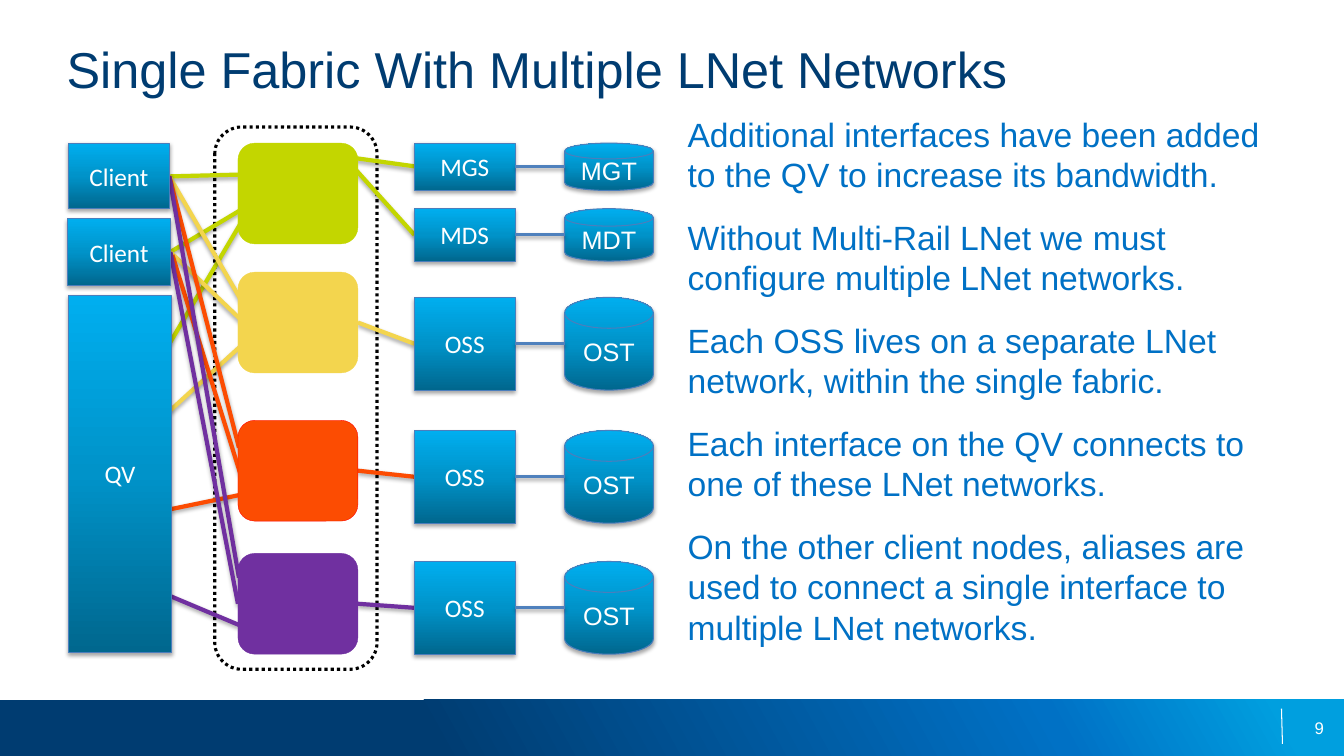
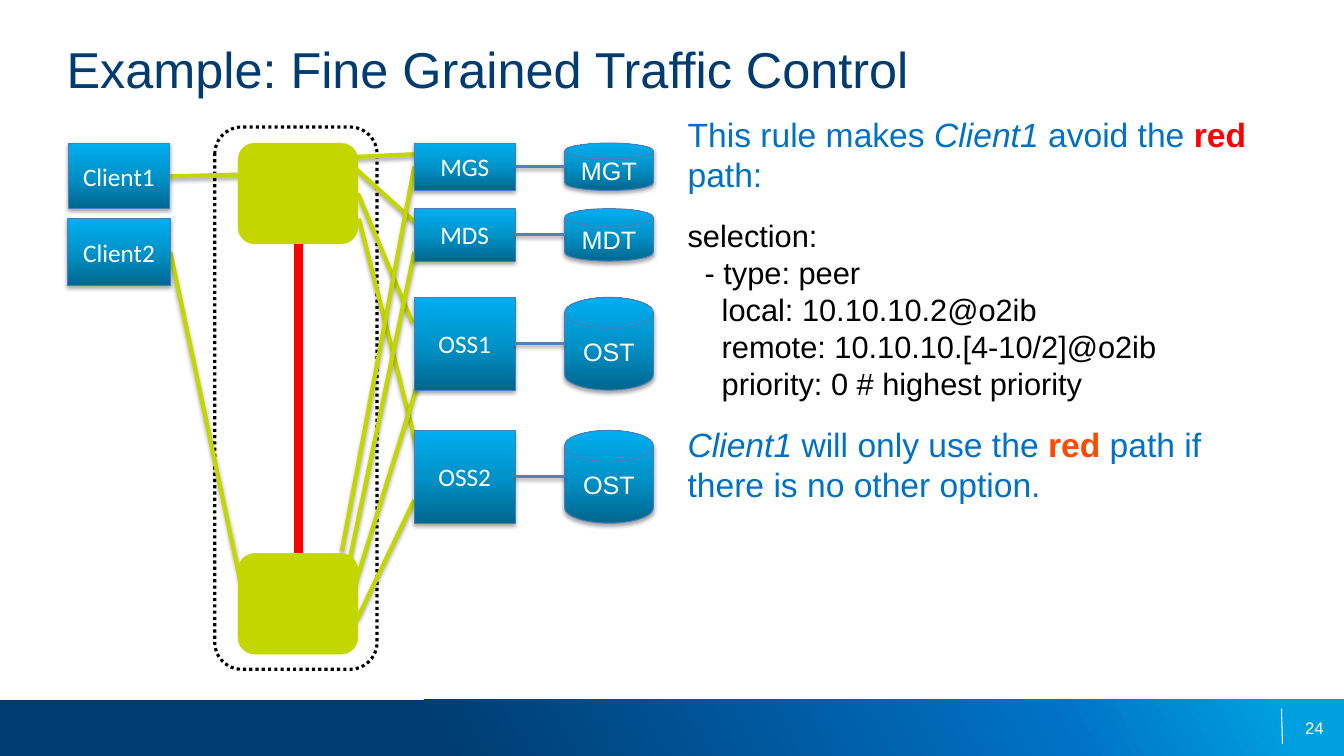
from collections import namedtuple

from lxml import etree
from pptx import Presentation
from pptx.dml.color import RGBColor
from pptx.enum import dml, shapes, text
from pptx.oxml.ns import qn
from pptx.util import Inches, Pt

NAVY = RGBColor(0x00, 0x3C, 0x71)
BLUE = RGBColor(0x00, 0x71, 0xC5)
SKY = RGBColor(0x00, 0x9F, 0xDF)
NODE_DARK = RGBColor(0x00, 0x67, 0x8E)
NODE_MID = RGBColor(0x00, 0x93, 0xC9)
NODE_LIGHT = RGBColor(0x00, 0xAE, 0xEF)
NODE_EDGE = RGBColor(0x4B, 0x7E, 0xBC)
DISK_LINK = RGBColor(0x4F, 0x81, 0xBD)
LIME = RGBColor(0xC3, 0xD6, 0x00)
SAND = RGBColor(0xF3, 0xD5, 0x4E)
ORANGE = RGBColor(0xFC, 0x4C, 0x02)
PURPLE = RGBColor(0x70, 0x30, 0xA0)
RED = RGBColor(0xFF, 0x00, 0x00)
WHITE = RGBColor(0xFF, 0xFF, 0xFF)
BLACK = RGBColor(0x00, 0x00, 0x00)

BAND_STOPS = [(32, NAVY), (78, BLUE), (95, SKY)]
NODE_STOPS = [(0, NODE_DARK), (50, NODE_MID), (100, NODE_LIGHT)]

Box = namedtuple("Box", "left top width height")
Span = namedtuple("Span", "text color bold italic size", defaults=(BLUE, False, False, 24))

TITLE_BOX = Box(0.66, 0.38, 12, 0.64)
BAND_BOX = Box(0, 6.94, 13.33, 0.56)
DIAGRAM_BOX = Box(0.67, 1.26, 5.81, 5.38)
NOTES_BOX = Box(6.82, 1.13, 5.84, 5.62)

# Positions below are inches from the top left corner of the diagram.
CLIENT_BOXES = [Box(0.01, 0.16, 1, 0.65), Box(0, 0.91, 1.02, 0.66), Box(0.01, 1.67, 1.02, 3.54)]
SERVER_ROWS = [(0.16, 0.47), (0.81, 0.52), (1.69, 0.92), (3.01, 0.92), (4.31, 0.92)]
SERVER_LEFT, SERVER_WIDTH = 3.44, 1
DISK_LEFT, DISK_WIDTH = 4.93, 0.88
SWITCH_LEFT, SWITCH_WIDTH, SWITCH_HEIGHT = 1.69, 1.19, 1
FABRIC_LEFT, FABRIC_WIDTH = 1.46, 1.61
PORT_1, PORT_2 = (1.01, 0.49), (1.02, 1.24)


def inside(box, part):
    return Box(box.left + part.left, box.top + part.top, part.width, part.height)


def set_gradient(shape, stops, angle):
    shape.fill.gradient()
    gradient = shape._element.spPr.find(qn("a:gradFill"))
    for child in list(gradient):
        gradient.remove(child)
    stop_list = etree.SubElement(gradient, qn("a:gsLst"))
    for percent, color in stops:
        stop = etree.SubElement(stop_list, qn("a:gs"), pos=str(percent * 1000))
        etree.SubElement(stop, qn("a:srgbClr"), val=str(color))
    etree.SubElement(gradient, qn("a:lin"), ang=str(angle * 60000), scaled="0")


def set_shadow(item, opacity=35, distance=1.8):
    """Replace the theme shadow by a soft one below, or by none at opacity 0."""
    properties = item._element.spPr
    effects = properties.find(qn("a:effectLst"))
    if effects is None:
        effects = etree.SubElement(properties, qn("a:effectLst"))
    if opacity:
        shadow = etree.SubElement(effects, qn("a:outerShdw"), blurRad=str(Pt(3.1)),
                                  dist=str(Pt(distance)), dir="5400000", rotWithShape="0")
        color = etree.SubElement(shadow, qn("a:srgbClr"), val=str(BLACK))
        etree.SubElement(color, qn("a:alpha"), val=str(opacity * 1000))


def add_span(para, words, size, color, font="Arial", bold=False, italic=False):
    run = para.add_run()
    run.text = words
    run.font.name = font
    run.font.size = Pt(size)
    run.font.color.rgb = color
    run.font.bold = bold
    run.font.italic = italic


def add_outline(page, kind, box, color=None, width=0.75):
    shape = page.shapes.add_shape(kind, *map(Inches, box))
    shape.shadow.inherit = False
    if color is None:
        shape.line.fill.background()
    else:
        shape.line.color.rgb = color
        shape.line.width = Pt(width)
    return shape


def add_line(page, start, end, color, width, opacity=35, distance=1.8):
    line = page.shapes.add_connector(shapes.MSO_CONNECTOR.STRAIGHT, *map(Inches, start + end))
    line.line.color.rgb = color
    line.line.width = Pt(width)
    set_shadow(line, opacity, distance)


def clear_margins(frame):
    frame.word_wrap = True
    frame.margin_left = frame.margin_right = frame.margin_top = frame.margin_bottom = 0


def add_text_box(page, box):
    frame = page.shapes.add_textbox(*map(Inches, box)).text_frame
    clear_margins(frame)
    return frame


def add_title(page, words):
    title = page.shapes.title
    title.left, title.top, title.width, title.height = map(Inches, TITLE_BOX)
    frame = title.text_frame
    clear_margins(frame)
    frame.vertical_anchor = text.MSO_ANCHOR.TOP
    para = frame.paragraphs[0]
    para.alignment = text.PP_ALIGN.LEFT
    add_span(para, words, 36, NAVY)


def add_footer(page, box, number):
    band = add_outline(page, shapes.MSO_SHAPE.RECTANGLE, box)
    set_gradient(band, BAND_STOPS, 331)
    add_line(page, (box.left + 12.71, box.top + 0.09), (box.left + 12.72, box.top + 0.44),
             WHITE, 0.75, opacity=0)
    para = add_text_box(page, inside(box, Box(12.63, 0.18, 0.5, 0.2))).paragraphs[0]
    para.alignment = text.PP_ALIGN.RIGHT
    add_span(para, str(number), 12, WHITE)


def add_node(page, box, label, kind=shapes.MSO_SHAPE.RECTANGLE, font="Calibri"):
    node = add_outline(page, kind, box, NODE_EDGE)
    set_gradient(node, NODE_STOPS, 270)
    set_shadow(node)
    node.text_frame.vertical_anchor = text.MSO_ANCHOR.MIDDLE
    para = node.text_frame.paragraphs[0]
    para.alignment = text.PP_ALIGN.CENTER
    add_span(para, label, 18, WHITE, font)


def add_server_row(page, box, server, disk):
    """Place a server, its disk and the line between them."""
    middle = box.top + box.height / 2
    disk_left = box.left + DISK_LEFT - SERVER_LEFT
    add_node(page, Box(box.left, box.top, SERVER_WIDTH, box.height), server)
    add_node(page, Box(disk_left, box.top, DISK_WIDTH, box.height), disk,
             shapes.MSO_SHAPE.FLOWCHART_MAGNETIC_DISK, "Arial")
    add_line(page, (box.left + SERVER_WIDTH, middle), (disk_left, middle), DISK_LINK, 2, 38, 1.6)


def add_diagram(page, box, clients, switches, servers, links, backbone=None):
    """Draw the fabric with its links behind the switches and nodes."""
    def point(x, y):
        return box.left + x, box.top + y

    fabric = add_outline(page, shapes.MSO_SHAPE.ROUNDED_RECTANGLE,
                         inside(box, Box(FABRIC_LEFT, 0, FABRIC_WIDTH, box.height)), BLACK, 2.25)
    fabric.fill.background()
    fabric.line.dash_style = dml.MSO_LINE.ROUND_DOT

    for color, pairs in links.items():
        for start, end in pairs:
            add_line(page, point(*start), point(*end), color, 3)
    for top, color, edge in switches:
        switch = add_outline(page, shapes.MSO_SHAPE.ROUNDED_RECTANGLE,
                             inside(box, Box(SWITCH_LEFT, top, SWITCH_WIDTH, SWITCH_HEIGHT)),
                             edge, 0.25)
        switch.fill.solid()
        switch.fill.fore_color.rgb = color
    for label, place in zip(clients, CLIENT_BOXES):
        add_node(page, inside(box, place), label)
    for (server, disk), (top, height) in zip(servers, SERVER_ROWS):
        row = Box(SERVER_LEFT, top, box.width - SERVER_LEFT, height)
        add_server_row(page, inside(box, row), server, disk)
    if backbone:
        add_line(page, point(*backbone[0]), point(*backbone[1]), RED, 6, opacity=0)


def add_notes_column(page, box, paragraphs):
    frame = add_text_box(page, box)
    for index, spans in enumerate(paragraphs):
        para = frame.add_paragraph() if index else frame.paragraphs[0]
        if index:
            para.space_before = Pt(16)
        for span in spans:
            for number, line in enumerate(span.text.split("\n")):
                if number:
                    para.add_line_break()
                add_span(para, line, span.size, span.color, bold=span.bold, italic=span.italic)


def add_page(deck, number, title, paragraphs, **diagram):
    page = deck.slides.add_slide(deck.slide_layouts[5])
    add_footer(page, BAND_BOX, number)
    add_title(page, title)
    add_notes_column(page, NOTES_BOX, paragraphs)
    add_diagram(page, DIAGRAM_BOX, **diagram)


def add_multiple_networks(deck):
    notes = [
        "Additional interfaces have been added to the QV to increase its bandwidth.",
        "Without Multi-Rail LNet we must configure multiple LNet networks.",
        "Each OSS lives on a separate LNet network, within the single fabric.",
        "Each interface on the QV connects to one of these LNet networks.",
        "On the other client nodes, aliases are used to connect a single interface "
        "to multiple LNet networks.",
    ]
    links = {
        LIME: [(PORT_1, (1.79, 0.47)), (PORT_2, (1.84, 0.75)), ((1.01, 2.15), (1.75, 0.9)),
               ((3.44, 1.07), (2.81, 0.37)), ((3.44, 0.39), (2.79, 0.3))],
        SAND: [(PORT_1, (1.74, 1.75)), (PORT_2, (1.79, 1.98)), ((1.02, 2.81), (1.71, 2.18)),
               ((3.44, 2.15), (2.88, 1.94))],
        ORANGE: [(PORT_1, (1.7, 3.18)), ((1.04, 1.27), (1.71, 3.43)),
                 ((1.03, 3.79), (1.71, 3.65)), ((3.44, 3.47), (2.88, 3.41))],
        PURPLE: [(PORT_1, (1.7, 4.47)), (PORT_2, (1.69, 4.73)), ((1.01, 4.65), (1.7, 4.94)),
                 ((3.44, 4.77), (2.88, 4.73))],
    }
    add_page(deck, 9, "Single Fabric With Multiple LNet Networks",
             [[Span(note)] for note in notes],
             clients=["Client", "Client", "QV"],
             switches=[(0.16, LIME, LIME), (1.44, SAND, SAND),
                       (2.91, ORANGE, RED), (4.23, PURPLE, PURPLE)],
             servers=[("MGS", "MGT"), ("MDS", "MDT")] + [("OSS", "OST")] * 3,
             links=links)


def add_traffic_control(deck):
    rule = """selection:
  - type: peer
    local: 10.10.10.2@o2ib
    remote: 10.10.10.[4-10/2]@o2ib
    priority: 0 # highest priority"""
    client = Span("Client1", italic=True)
    paragraphs = [
        [Span("This rule makes "), client, Span(" avoid the "),
         Span("red", RED, bold=True), Span(" path:")],
        [Span(rule, BLACK, size=22)],
        [client, Span(" will only use the "), Span("red", ORANGE, bold=True),
         Span(" path if there is no other option.")],
    ]
    links = {
        LIME: [(PORT_1, (1.79, 0.47)), (PORT_2, (1.71, 4.49)),
               ((3.48, 3.24), (2.89, 0.91)), ((3.42, 1.94), (2.88, 0.66)),
               ((3.44, 0.94), (2.81, 0.37)), ((3.44, 0.27), (2.79, 0.3)),
               ((3.44, 3.7), (2.87, 4.89)), ((3.53, 2.37), (2.84, 4.58)),
               ((3.44, 1.24), (2.8, 4.29)), ((3.44, 0.39), (2.72, 4.21))],
    }
    add_page(deck, 24, "Example: Fine Grained Traffic Control", paragraphs,
             clients=["Client1", "Client2"],
             switches=[(0.16, LIME, LIME), (4.23, LIME, LIME)],
             servers=[("MGS", "MGT"), ("MDS", "MDT"), ("OSS1", "OST"), ("OSS2", "OST")],
             links=links, backbone=((2.29, 1.16), (2.29, 4.23)))


def main():
    deck = Presentation()
    deck.slide_width = Inches(13.33)
    deck.slide_height = Inches(7.5)
    add_multiple_networks(deck)
    add_traffic_control(deck)
    deck.save("out.pptx")


if __name__ == "__main__":
    main()
